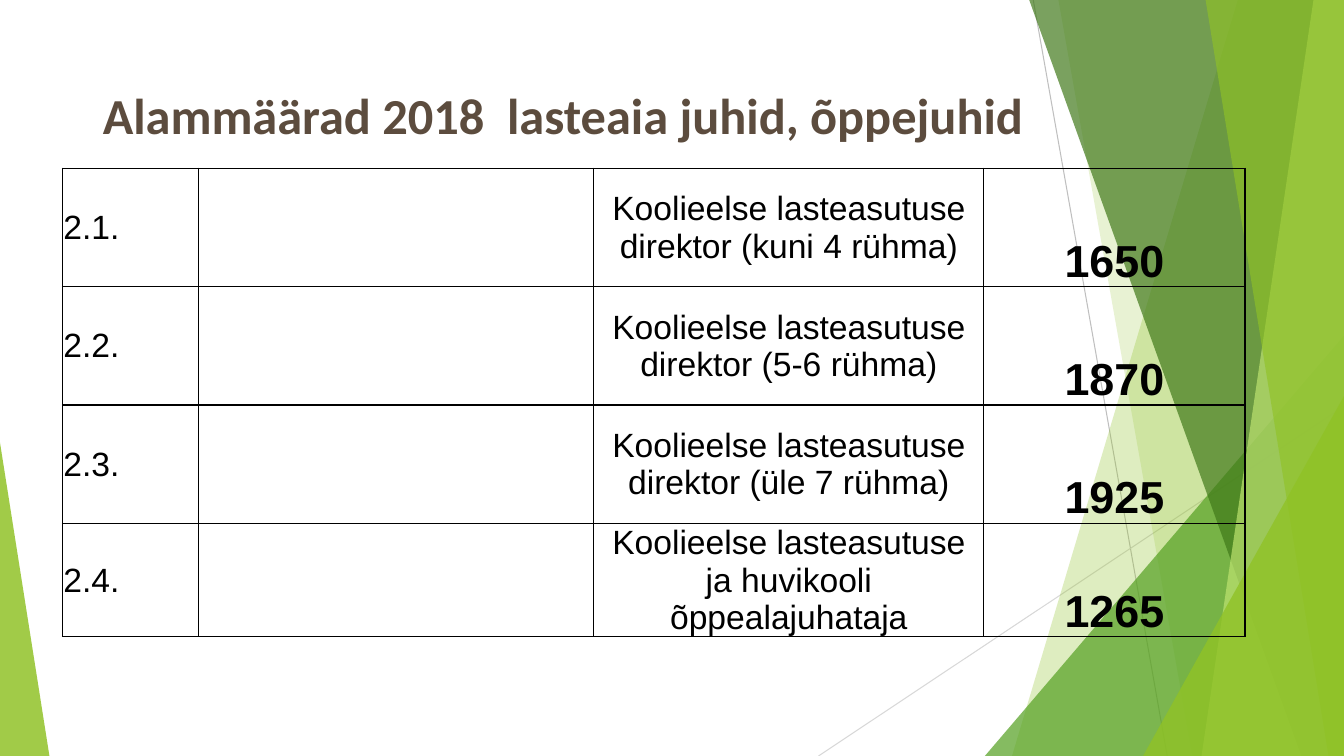
from lxml import etree
from pptx import Presentation, util as u
from pptx.dml.color import RGBColor
from pptx.enum import shapes, text
from pptx.oxml import ns

LEFT, MID = text.PP_ALIGN.LEFT, text.PP_ALIGN.CENTER
CENTER, BOTTOM = text.MSO_ANCHOR.MIDDLE, text.MSO_ANCHOR.BOTTOM
LIME, GREEN, MOSS, PALE = "90C226", "54A021", "3F7818", "BFE471"


def rgb(code):
    return RGBColor.from_string(code)


def sub(node, tag, **attrs):
    return etree.SubElement(node, ns.qn(tag), **attrs)


class Deck:
    """Style and current slide; lengths are percents of the slide."""

    def __init__(self):
        self.prs = Presentation()
        self.prs.slide_width, self.prs.slide_height = u.Inches(13.33), u.Inches(7.5)
        self.slide = self.prs.slides.add_slide(self.prs.slide_layouts[5])
        self.items = self.slide.shapes

    def x(self, share):
        return round(self.prs.slide_width * share / 100)

    def y(self, share):
        return round(self.prs.slide_height * share / 100)

    def box(self, left, top, wide, high):
        return self.x(left), self.y(top), self.x(wide), self.y(high)

    def paint(self, shape, color, alpha):
        shape.shadow.inherit = False
        shape.fill.solid()
        shape.fill.fore_color.rgb = rgb(color)
        tint = shape.element.spPr.find(".//" + ns.qn("a:srgbClr"))
        sub(tint, "a:alpha", val=str(alpha * 1000))
        shape.line.fill.background()

    def line(self, x1, y1, x2, y2, color):
        link = self.items.add_connector(
            shapes.MSO_CONNECTOR.STRAIGHT,
            self.x(x1), self.y(y1), self.x(x2), self.y(y2))
        link.line.color.rgb = rgb(color)
        link.line.width = u.Pt(0.75)
        sub(link.element.spPr, "a:effectLst")

    def band(self, top, base, color, alpha):
        """Slanted band that reaches the right edge of the slide."""
        edge = self.items.build_freeform(self.x(top), 0)
        edge.add_line_segments([(self.x(100), 0), (self.x(100), self.y(100)),
                                (self.x(base), self.y(100))])
        self.paint(edge.convert_to_shape(), color, alpha)

    def wedge(self, left, top, wide, tip, color, alpha):
        """Triangle that stands on the bottom edge of the slide."""
        shape = self.items.add_shape(shapes.MSO_SHAPE.ISOSCELES_TRIANGLE,
                                     *self.box(left, top, wide, 100 - top))
        shape.adjustments[0] = tip
        self.paint(shape, color, alpha)

    def label(self, frame, words, size, font, color, bold, align):
        para = frame.paragraphs[0]
        para.alignment = align
        run = para.add_run()
        run.text = words
        run.font.size, run.font.name, run.font.bold = u.Pt(size), font, bold
        run.font.color.rgb = rgb(color)
        return para

    def title(self, words, *place):
        head = self.items.title
        head.left, head.top, head.width, head.height = self.box(*place)
        frame = head.text_frame
        frame.word_wrap = True
        frame.auto_size = text.MSO_AUTO_SIZE.NONE
        frame.vertical_anchor = CENTER
        para = self.label(frame, words, 36, "Calibri", "5C4C3E", True, LEFT)
        para.line_spacing = 0.9
        self.items.element.append(head.element)  # in front of the bands

    def cell(self, cell, words, size, bold, align, anchor):
        cell.margin_left = cell.margin_right = cell.margin_top = u.Inches(0.01)
        cell.margin_bottom = 0
        cell.vertical_anchor = anchor
        props = cell._tc.get_or_add_tcPr()
        for side in ("a:lnL", "a:lnR", "a:lnT", "a:lnB"):
            edge = sub(props, side, w=str(u.Pt(1)))
            sub(sub(edge, "a:solidFill"), "a:srgbClr", val="000000")
        cell.fill.background()
        if words:
            self.label(cell.text_frame, words, size, "Arial", "000000", bold, align)

    def table(self, left, top, cols, rows, data, looks):
        grid = self.items.add_table(
            len(rows), len(cols),
            *self.box(left, top, sum(cols), sum(rows))).table
        grid.first_row = grid.horz_banding = False
        for col, wide in zip(grid.columns, cols):
            col.width = self.x(wide)
        for row, high, line in zip(grid.rows, rows, data):
            row.height = self.y(high)
            for cell, words, look in zip(row.cells, line, looks):
                self.cell(cell, words, *look)


def main():
    deck = Deck()

    # Thin lines and green bands
    deck.line(76.88, 0, 86.85, 100, "BFBFBF")
    deck.line(100, 53.73, 60.9, 100, "D8D8D8")
    deck.band(92.1, 75.3, LIME, 29)
    deck.band(78.75, 88.73, LIME, 20)
    deck.wedge(73.28, 44.4, 26.72, 1, GREEN, 71)
    deck.band(76.58, 96.83, MOSS, 69)
    deck.band(97.73, 89.4, PALE, 69)
    deck.band(89.7, 98.85, LIME, 64)
    deck.wedge(85.05, 52.4, 14.95, 1, LIME, 80)
    deck.wedge(0, 58.53, 3.68, 0, LIME, 84)

    # Title
    deck.title("Alammäärad 2018  lasteaia juhid, õppejuhid",
               6.9, 8.93, 89.1, 13.33)

    # Pay table
    jobs = [("direktor (kuni 4 rühma)", "1650"),
            ("direktor (5-6 rühma)", "1870"),
            ("direktor (üle 7 rühma)", "1925"),
            ("ja huvikooli õppealajuhataja", "1265")]
    data = [(f"2.{n}.", "", f"Koolieelse lasteasutuse {job}", pay)
            for n, (job, pay) in enumerate(jobs, 1)]
    plain = (24, False, LEFT, CENTER)
    looks = [plain, plain, (24, False, MID, CENTER), (32, True, MID, BOTTOM)]
    deck.table(4.65, 22.27, [10.13, 29.4, 29.03, 19.43],
               [15.65] * 3 + [14.9], data, looks)

    deck.prs.save("out.pptx")


if __name__ == "__main__":
    main()
